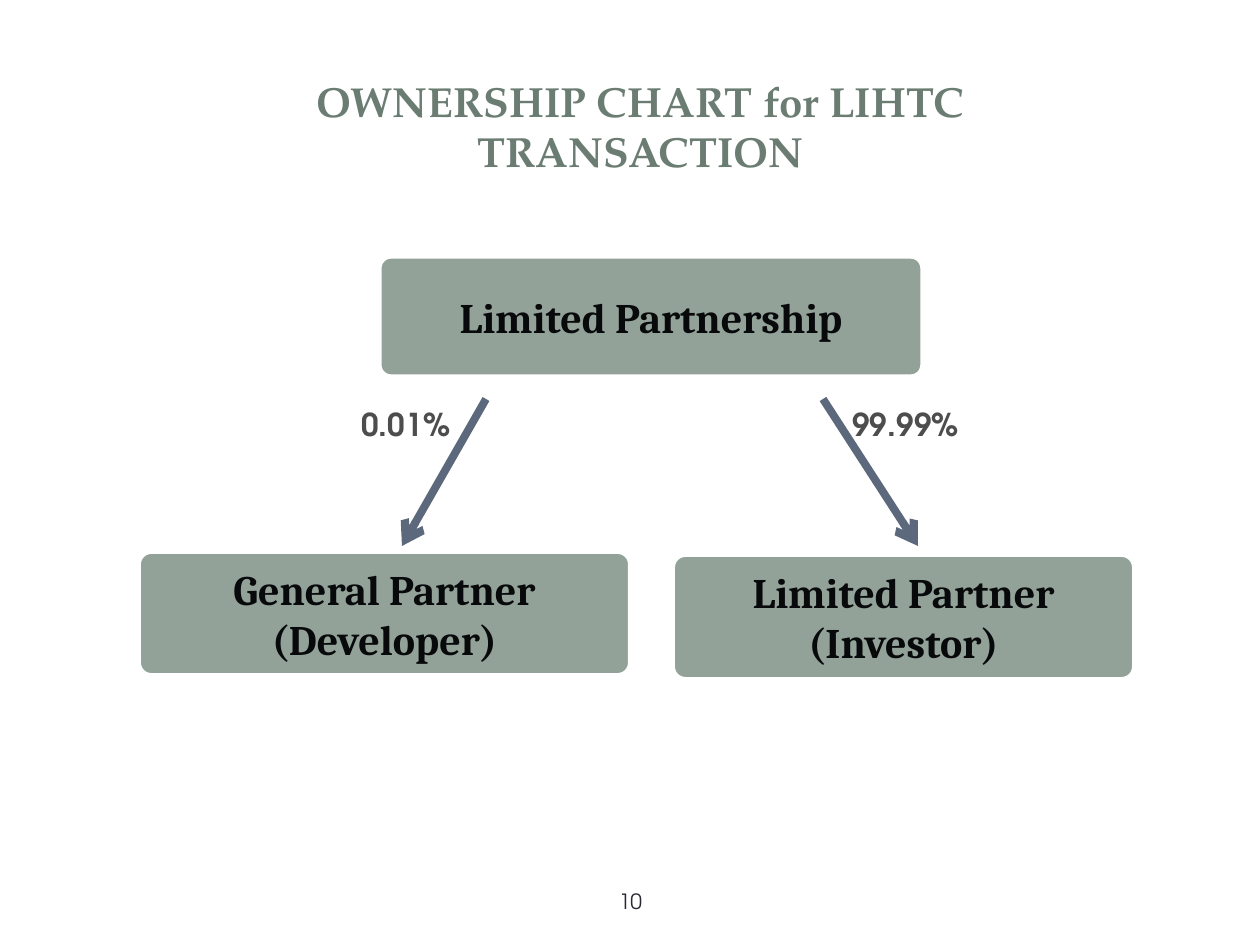
import pptx
import pptx.dml.color
import pptx.enum.shapes
import pptx.enum.text
import pptx.oxml.ns
import pptx.util
from lxml import etree

RGB = pptx.dml.color.RGBColor
SAGE = RGB(0x93, 0xA2, 0x99)
MOSS = RGB(0x6B, 0x7D, 0x72)
SLATE = RGB(0x5C, 0x69, 0x7C)
INK = RGB(0x08, 0x09, 0x0B)
GRAY = RGB(0x4D, 0x4D, 0x4D)
DARK = RGB(0x29, 0x29, 0x34)
WHITE = RGB(0xFF, 0xFF, 0xFF)
SERIF, SANS, TITLE = "Cambria", "TeX Gyre Adventor", "TeX Gyre Pagella"
ALIGN = pptx.enum.text.PP_ALIGN
ANCHOR = pptx.enum.text.MSO_ANCHOR
SCALE = 914400 / 126


def emu(*spans):
    return [pptx.util.Emu(round(span * SCALE)) for span in spans]


class Chart:
    """Draws the ownership chart on one slide in a shared style."""

    def __init__(self, deck):
        self.slide = deck.slides.add_slide(deck.slide_layouts[6])
        self.shapes = self.slide.shapes

    def label(self, shape, text, font, size, color, bold=True,
              align=ALIGN.CENTER, anchor=ANCHOR.MIDDLE):
        frame = shape.text_frame
        frame.text = text
        frame.word_wrap = True
        frame.vertical_anchor = anchor
        for para in frame.paragraphs:
            para.alignment = align
            for run in para.runs:
                run.font.name = font
                run.font.size = pptx.util.Pt(size)
                run.font.bold = bold
                run.font.color.rgb = color

    def text(self, place, text, *style, **options):
        self.label(self.shapes.add_textbox(*emu(*place)), text, *style, **options)

    def box(self, place, text, edge):
        kind = pptx.enum.shapes.MSO_SHAPE.ROUNDED_RECTANGLE
        shape = self.shapes.add_shape(kind, *emu(*place))
        shape.shadow.inherit = False
        shape.adjustments[0] = 0.1
        shape.fill.solid()
        shape.fill.fore_color.rgb = SAGE
        shape.line.color.rgb = WHITE
        shape.line.width = pptx.util.Pt(edge)
        self.label(shape, text, SERIF, 24, INK)

    def arrow(self, *ends):
        kind = pptx.enum.shapes.MSO_CONNECTOR.STRAIGHT
        line = self.shapes.add_connector(kind, *emu(*ends))
        line.line.color.rgb = SLATE
        line.line.width = pptx.util.Pt(4.5)
        name = pptx.oxml.ns.qn
        props = line._element.spPr
        etree.SubElement(props.find(name("a:ln")), name("a:tailEnd"), type="arrow")
        etree.SubElement(props, name("a:effectLst"))


def main():
    deck = pptx.Presentation()
    deck.slide_width, deck.slide_height = emu(1260, 945)
    chart = Chart(deck)
    chart.box((379, 256, 544, 121), "Limited Partnership", 3)
    chart.box((139, 552, 491, 123), "General Partner\n(Developer)", 2.25)
    chart.box((673, 555, 461, 124), "Limited Partner\n(Investor)", 2.25)
    chart.text((168, 69, 945, 126), "OWNERSHIP CHART for LIHTC TRANSACTION",
               TITLE, 24, MOSS, anchor=ANCHOR.TOP)
    chart.arrow(486, 399, 402, 546)
    chart.arrow(823, 399, 918, 546)
    for left, share in ((349, "0.01%"), (840, "99.99%")):
        chart.text((left, 399, 136, 50), share, SANS, 18, GRAY,
                   align=ALIGN.LEFT, anchor=ANCHOR.TOP)
    chart.text((431, 876, 399, 50), "10", SANS, 12, DARK, bold=False)
    deck.save("out.pptx")


if __name__ == "__main__":
    main()
